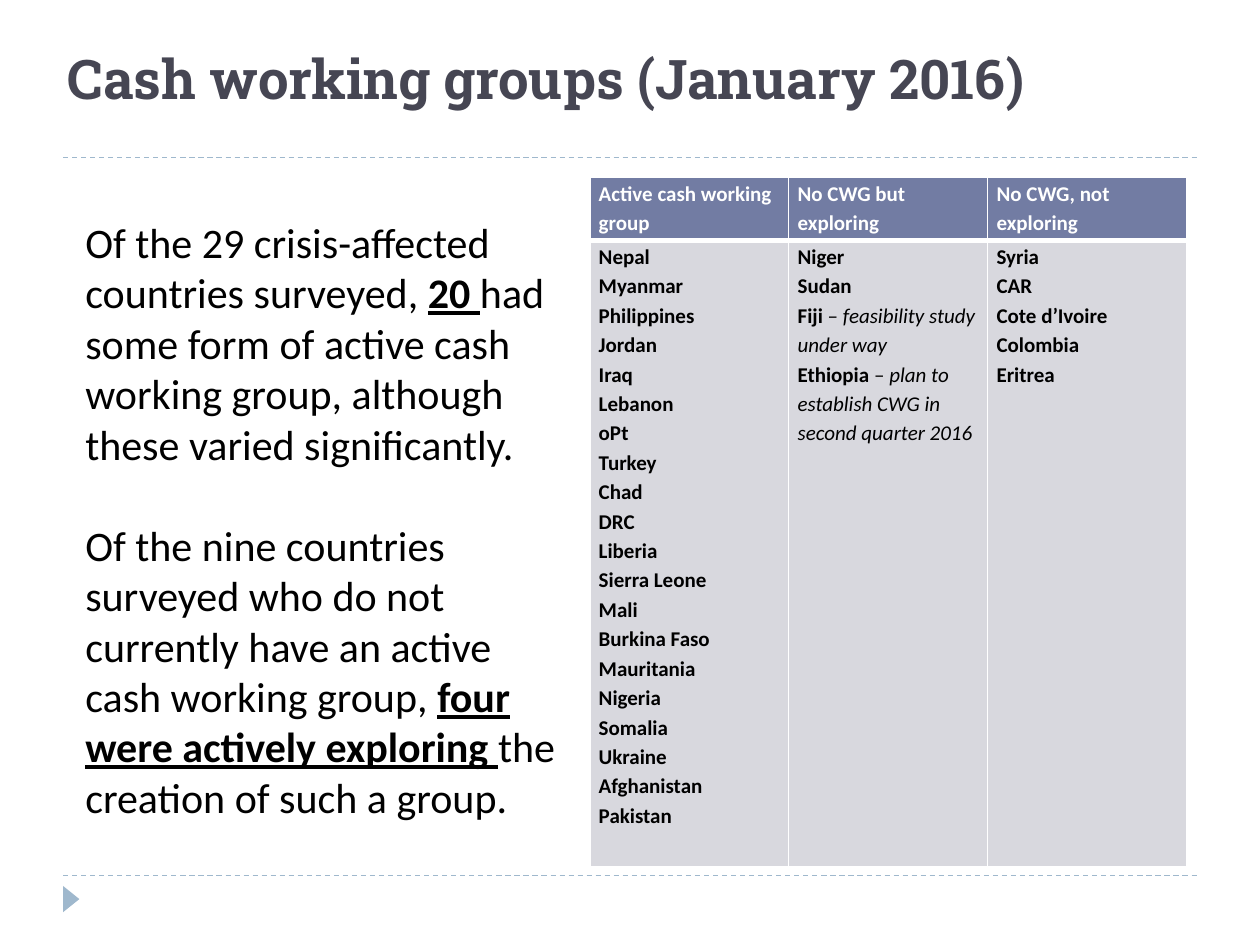
from lxml import etree
from pptx import Presentation
from pptx.dml.color import RGBColor
from pptx.enum.dml import MSO_LINE
from pptx.enum.shapes import MSO_CONNECTOR, MSO_SHAPE
from pptx.enum.text import MSO_ANCHOR
from pptx.oxml.ns import qn
from pptx.util import Cm, Pt

DASH = MSO_LINE.DASH
STRAIGHT = MSO_CONNECTOR.STRAIGHT
TRIANGLE = MSO_SHAPE.ISOSCELES_TRIANGLE
BOTTOM = MSO_ANCHOR.BOTTOM

INK, WHITE, BLACK = "464653", "FFFFFF", "000000"
ACCENT, HEAD_FILL, BODY_FILL = "9FB8CD", "727CA3", "D8D8DE"

# Content: a paragraph is a list of (text, style), style letters b, i, u
TITLE = "Cash working groups (January 2016)"
FINDINGS = [
    [("Of the 29 crisis-affected countries surveyed, ", ""), ("20 ", "bu"),
     ("had some form of active cash working group, although these varied "
      "significantly.", "")],
    [("Of the nine countries surveyed who do not currently have an active "
      "cash working group, ", ""), ("four were actively exploring ", "bu"),
     ("the creation of such a group.", "")],
]


def bold(*names):
    return [[(name, "b")] for name in names]


COLUMNS = [
    ("Active cash working group",
     bold("Nepal", "Myanmar", "Philippines", "Jordan", "Iraq", "Lebanon",
          "oPt", "Turkey", "Chad", "DRC", "Liberia", "Sierra Leone", "Mali",
          "Burkina Faso", "Mauritania", "Nigeria", "Somalia", "Ukraine",
          "Afghanistan", "Pakistan")),
    ("No CWG but exploring",
     bold("Niger", "Sudan") + [
         [("Fiji ", "b"), ("– ", ""), ("feasibility study under way", "i")],
         [("Ethiopia", "b"), (" –", ""),
          (" plan to establish CWG in second quarter 2016", "i")]]),
    ("No CWG, not exploring",
     bold("Syria", "CAR", "Cote d’Ivoire", "Colombia", "Eritrea")),
]


def rgb(color):
    return RGBColor.from_string(color)


def write(tf, paragraphs, size, color, font="Calibri", spacing=None, gap=0):
    tf.word_wrap = True
    for i, runs in enumerate(paragraphs):
        p = tf.add_paragraph() if i else tf.paragraphs[0]
        p.font.size, p.font.name = Pt(size), font
        p.font.color.rgb = rgb(color)
        p.line_spacing = spacing
        p.space_before = Pt(gap if i else 0)
        for text, style in runs:
            r = p.add_run()
            r.text = text
            r.font.bold = "b" in style
            r.font.italic = "i" in style
            r.font.underline = "u" in style


def set_borders(cell, widths):
    tcPr = cell._tc.get_or_add_tcPr()
    for i, (side, width) in enumerate(widths.items()):
        ln = etree.Element(qn("a:ln" + side), w=str(Pt(width)))
        fill = etree.SubElement(ln, qn("a:solidFill"))
        etree.SubElement(fill, qn("a:srgbClr"), val=WHITE)
        tcPr.insert(i, ln)


def fill_cell(cell, paragraphs, color, fill, widths):
    cell.margin_left = cell.margin_right = Cm(0.18)
    cell.margin_top = cell.margin_bottom = 0
    cell.fill.solid()
    cell.fill.fore_color.rgb = rgb(fill)
    write(cell.text_frame, paragraphs, 12, color, spacing=1.15)
    set_borders(cell, widths)


prs = Presentation()
prs.slide_width, prs.slide_height = Cm(25.4), Cm(19.05)
s = prs.slides.add_slide(prs.slide_layouts[6])

# Dashed rules and corner marker
for y in (17.65, 3.18):
    line = s.shapes.add_connector(STRAIGHT, Cm(1.27), Cm(y), Cm(24.13), Cm(y))
    line.line.color.rgb = rgb(ACCENT)
    line.line.width = Pt(0.75)
    line.line.dash_style = DASH
    etree.SubElement(line._element.spPr, qn("a:effectLst"))

marker = s.shapes.add_shape(TRIANGLE, Cm(1.17), Cm(17.96), Cm(0.53), Cm(0.33))
marker.rotation = 90
marker.shadow.inherit = False
marker.fill.solid()
marker.fill.fore_color.rgb = rgb(ACCENT)
marker.line.fill.background()

# Title
tf = s.shapes.add_textbox(Cm(1.12), Cm(0.41), Cm(22.86), Cm(3.18)).text_frame
tf.vertical_anchor = BOTTOM
tf.margin_bottom = Cm(1.37)
write(tf, [[(TITLE, "b")]], 31.2, INK, font="Roboto Slab")

# Table of countries
ROW_HEIGHTS = (1.27, 12.62)
COL_WIDTH = 4.01
table = s.shapes.add_table(2, len(COLUMNS), Cm(11.89), Cm(3.58),
                           Cm(COL_WIDTH * len(COLUMNS)),
                           Cm(sum(ROW_HEIGHTS))).table
table.horz_banding = False
for row, height in zip(table.rows, ROW_HEIGHTS):
    row.height = Cm(height)
for c, (heading, countries) in enumerate(COLUMNS):
    table.columns[c].width = Cm(COL_WIDTH)
    fill_cell(table.cell(0, c), bold(heading), WHITE, HEAD_FILL,
              {"L": 1, "R": 1, "T": 1, "B": 3})
    fill_cell(table.cell(1, c), countries, BLACK, BODY_FILL,
              {"L": 1, "R": 1, "T": 3, "B": 1})

# Findings
tf = s.shapes.add_textbox(Cm(1.47), Cm(4.24), Cm(10.36), Cm(13.34)).text_frame
write(tf, FINDINGS, 24, BLACK, gap=29)

prs.save("out.pptx")
